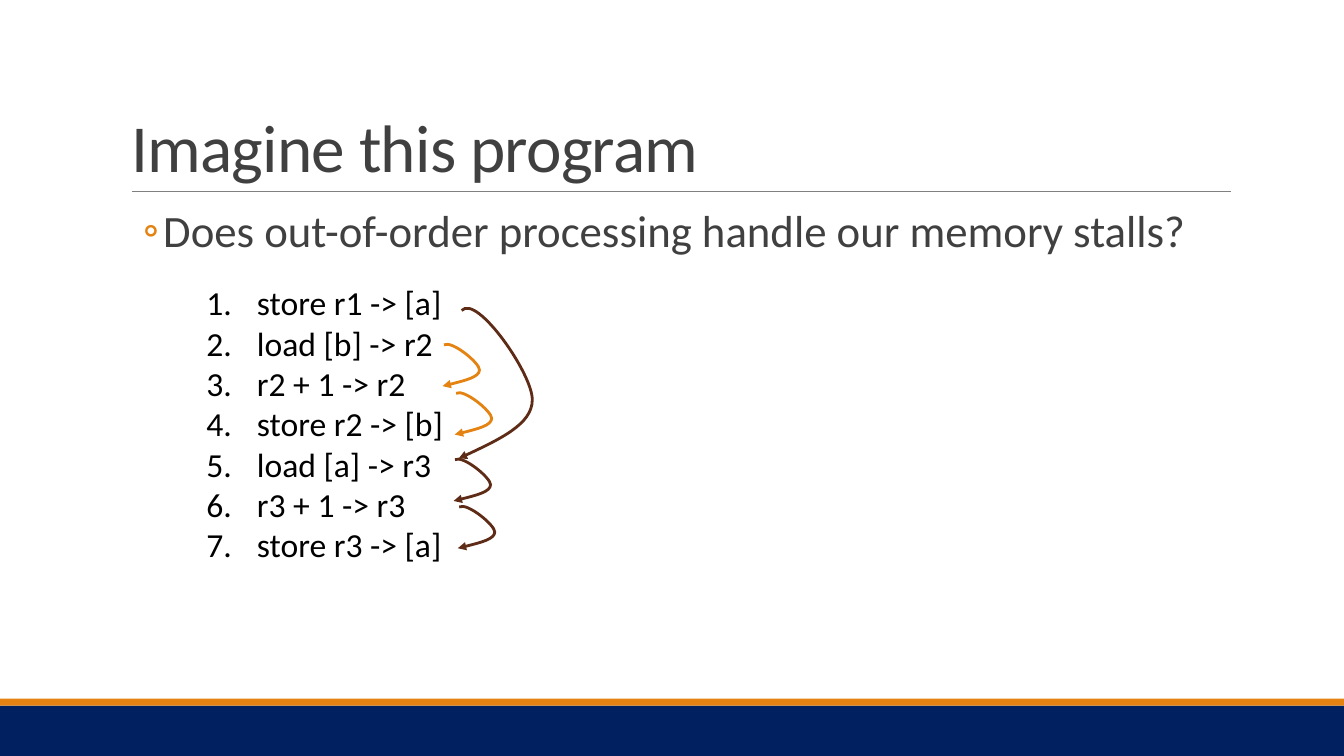
from lxml import etree
from pptx import Presentation
from pptx.dml.color import RGBColor
from pptx.enum import shapes, text
from pptx.oxml.ns import qn
from pptx.util import Pt

COLORS = {"navy": "002060", "orange": "E48312", "brown": "5E2C16",
          "rule": "808080", "heading": "404040", "code": "000000"}
FONT = "Calibri"
WIDTH, HEIGHT = 960, 540

TITLE = "Imagine this program"
QUESTION = "Does out-of-order processing handle our memory stalls?"
PROGRAM = ["store r1 -> [a]", "load [b] -> r2", "r2 + 1 -> r2", "store r2 -> [b]",
           "load [a] -> r3", "r3 + 1 -> r3", "store r3 -> [a]"]

# Arrow outlines, relative to the arrow tip: two cubic curves, three points each
NEXT_LINE = [(13.2, -3.2), (26.4, -6.5), (26.4, -11.6),
             (26.6, -16.4), (6.8, -32.8), (1, -29.5)]
FOUR_LINES = [(26, -12.2), (52.6, -24.5), (52.6, -41.8),
              (53.3, -59.8), (13, -118), (2.2, -105.8)]
DEPENDENCIES = [  # tip, outline, colour
    ((316.1, 275.8), NEXT_LINE, "orange"),
    ((324, 357.8), NEXT_LINE, "brown"),
    ((324.8, 310.4), NEXT_LINE, "orange"),
    ((327, 391.6), NEXT_LINE, "brown"),
    ((327.6, 327.6), FOUR_LINES, "brown"),
]


def rgb(name):
    return RGBColor.from_string(COLORS[name])


def place(shape, left, top, width, height):
    shape.left, shape.top = Pt(left), Pt(top)
    shape.width, shape.height = Pt(width), Pt(height)


def write(shape, lines, size, color, anchor="TOP", inset=7.2, level=0, spacing=1,
          before=0, after=0, indent=None, bullet=None, bullet_color=None, tracking=None):
    """Fill a shape with paragraphs; bullet is a character, or "auto" for numbers."""
    frame = shape.text_frame
    frame.word_wrap = True
    frame.auto_size = text.MSO_AUTO_SIZE.NONE
    frame.vertical_anchor = getattr(text.MSO_ANCHOR, anchor)
    frame.margin_left = frame.margin_right = Pt(inset)
    frame.margin_top = frame.margin_bottom = Pt(3.6)
    for number, line in enumerate(lines):
        para = frame.paragraphs[0] if number == 0 else frame.add_paragraph()
        para.level = level
        props = para._p.get_or_add_pPr()
        if indent:
            props.set("marL", str(Pt(indent[0])))
            props.set("indent", str(Pt(indent[1])))
        if bullet_color:
            holder = etree.SubElement(props, qn("a:buClr"))
            etree.SubElement(holder, qn("a:srgbClr"), val=COLORS[bullet_color])
        if bullet:
            etree.SubElement(props, qn("a:buFont"), typeface=FONT)
        if bullet == "auto":
            etree.SubElement(props, qn("a:buAutoNum"), type="arabicPeriod")
        elif bullet:
            etree.SubElement(props, qn("a:buChar"), char=bullet)
        para.alignment = text.PP_ALIGN.LEFT
        para.line_spacing = spacing
        para.space_before = Pt(before if number else 0)
        para.space_after = Pt(after)
        run = para.add_run()
        run.text = line
        run.font.name, run.font.size = FONT, Pt(size)
        run.font.color.rgb = rgb(color)
        if tracking:
            run._r.get_or_add_rPr().set("spc", str(round(tracking * 100)))


def add_band(slide, top, height, color):
    band = slide.shapes.add_shape(shapes.MSO_SHAPE.RECTANGLE, 0, Pt(top), Pt(WIDTH), Pt(height))
    band.shadow.inherit = False
    band.fill.solid()
    band.fill.fore_color.rgb = rgb(color)
    band.line.fill.background()


def add_rule(slide, left, right, y):
    rule = slide.shapes.add_connector(shapes.MSO_CONNECTOR.STRAIGHT,
                                      Pt(left), Pt(y), Pt(right), Pt(y))
    rule.line.color.rgb = rgb("rule")
    rule.line.width = Pt(0.5)
    etree.SubElement(rule._element.spPr, qn("a:effectLst"))


def add_curved_arrow(slide, tip, outline, color):
    points = [(Pt(tip[0] + dx), Pt(tip[1] + dy)) for dx, dy in outline]
    builder = slide.shapes.build_freeform(Pt(tip[0]), Pt(tip[1]))
    builder.add_line_segments([points[2], points[5]], close=False)
    arrow = builder.convert_to_shape()

    # Turn each straight segment into a cubic curve
    segments = list(arrow._element.iter(qn("a:lnTo")))
    for number, segment in enumerate(segments):
        segment.tag = qn("a:cubicBezTo")
        segment.clear()
        for x, y in points[3 * number:3 * number + 3]:
            etree.SubElement(segment, qn("a:pt"), x=str(x - arrow.left), y=str(y - arrow.top))

    arrow.shadow.inherit = False
    arrow.fill.background()
    arrow.line.color.rgb = rgb(color)
    arrow.line.width = Pt(2)
    etree.SubElement(arrow.line._get_or_add_ln(), qn("a:headEnd"), type="triangle")


def main():
    deck = Presentation()
    deck.slide_width, deck.slide_height = Pt(WIDTH), Pt(HEIGHT)
    slide = deck.slides.add_slide(deck.slide_layouts[1])

    add_band(slide, 504, 36, "navy")
    add_band(slide, 499, 5, "orange")
    add_rule(slide, 94.3, 879, 136.8)

    heading, question = slide.placeholders
    place(heading, 86.4, 22.3, 792, 114.5)
    write(heading, [TITLE], 48, "heading", anchor="BOTTOM", spacing=0.85, tracking=-0.5)
    place(question, 86.4, 145.4, 792, 57)
    write(question, [QUESTION], 32, "heading", inset=0, level=1, spacing=0.9, after=4,
          indent=(30.2, -14.4), bullet="◦", bullet_color="orange")

    program = slide.shapes.add_textbox(Pt(140.4), Pt(198), Pt(198), Pt(211))
    write(program, PROGRAM, 24, "code", indent=(36, -36), bullet="auto")

    for tip, outline, color in DEPENDENCIES:
        add_curved_arrow(slide, tip, outline, color)

    deck.save("out.pptx")


if __name__ == "__main__":
    main()
